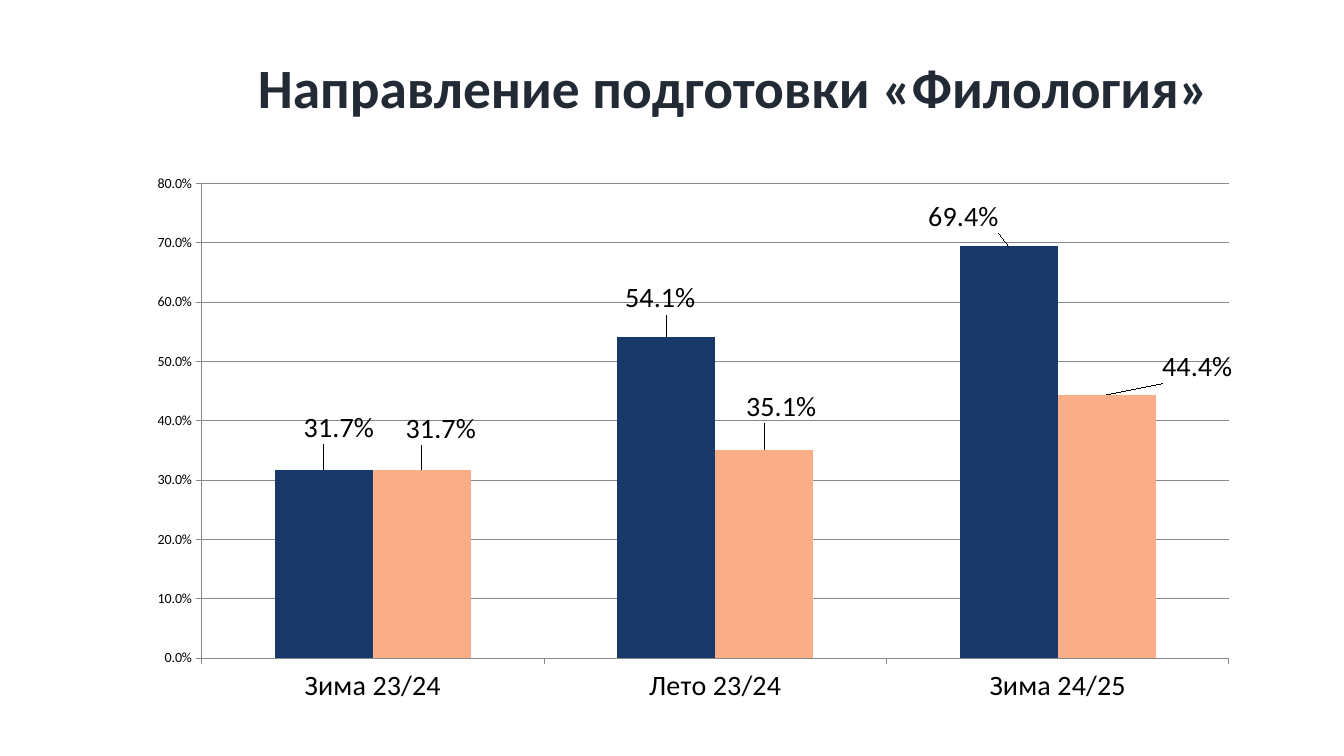
from lxml import etree
from pptx import Presentation
from pptx.chart.data import CategoryChartData as Data
from pptx.dml.color import RGBColor
from pptx.enum.chart import XL_CHART_TYPE as Kind, XL_LABEL_POSITION as Pos
from pptx.enum.chart import XL_TICK_MARK as Tick
from pptx.enum.text import MSO_ANCHOR as Anchor, PP_ALIGN as Align
from pptx.oxml.ns import qn
from pptx.util import Inches, Pt

WIDE, HIGH = 13.33, 7.5
# Chart box and the plot inside it, in inches
BOX = (1.35, 1.64, 11.06, 5.45)
PLOT = (0.65, 0.18, 10.19, 4.71)
TERMS = ["Зима 23/24", "Лето 23/24", "Зима 24/25"]
# Name, colour, values, label shifts in inches
ROWS = [
    ("Series 1", "1A396B", (0.317, 0.541, 0.694),
     ((0.15, -0.21), (-0.06, -0.18), (-0.45, -0.09))),
    ("Series 2", "FBAD87", (0.317, 0.351, 0.444),
     ((0.19, -0.2), (0.17, -0.22), (0.9, -0.07))),
]


def hue(code):
    return RGBColor.from_string(code)


def style(font, size, code="000000", bold=False):
    looks = {"name": "Calibri", "size": Pt(size), "bold": bold}
    for key, value in looks.items():
        setattr(font, key, value)
    font.color.rgb = hue(code)


def rule(line):
    line.color.rgb = hue("888888")
    line.width = Pt(0.75)


def place(node, after, **parts):
    """Put a manual layout after a chart element's child."""
    for old in node.findall(qn("c:layout")):
        node.remove(old)
    layout = etree.Element(qn("c:layout"))
    if after is None:
        node.insert(0, layout)
    else:
        after.addnext(layout)
    manual = etree.SubElement(layout, qn("c:manualLayout"))
    for tag, value in parts.items():
        etree.SubElement(manual, qn("c:" + tag)).set("val", str(value))


def add_title(slide, text):
    box = slide.shapes.add_textbox(
        Inches(2.46), Inches(0.6), Inches(9.96), Inches(1.12))
    frame = box.text_frame
    looks = {"word_wrap": True, "vertical_anchor": Anchor.TOP,
             "margin_top": 0, "margin_bottom": 0}
    for key, value in looks.items():
        setattr(frame, key, value)
    para = frame.paragraphs[0]
    para.alignment, para.line_spacing = Align.LEFT, 0.9
    run = para.add_run()
    run.text = text
    style(run.font, 39.6, "222A35", True)


def set_axis(axis, size):
    axis.major_tick_mark = Tick.OUTSIDE
    axis.minor_tick_mark = Tick.NONE
    style(axis.tick_labels.font, size)
    rule(axis.format.line)


def set_bars(bars, code, shifts):
    bars.format.fill.solid()
    bars.format.fill.fore_color.rgb = hue(code)
    bars.invert_if_negative = False
    labels = bars.data_labels
    labels.show_value = True
    labels.number_format, labels.number_format_is_linked = "0.0%", False
    style(labels.font, 20)
    # Each label is moved from its place above the bar
    for i, (x, y) in enumerate(shifts):
        label = bars.points[i].data_label
        label.position = Pos.OUTSIDE_END
        style(label.font, 20)
    for node, (x, y) in zip(labels._element.findall(qn("c:dLbl")), shifts):
        place(node, node.find(qn("c:idx")), x=x / BOX[2], y=y / BOX[3])


def add_bars(slide):
    data = Data(number_format="0.0%")
    data.categories = TERMS
    for name, _, values, _ in ROWS:
        data.add_series(name, values)
    chart = slide.shapes.add_chart(
        Kind.COLUMN_CLUSTERED, *map(Inches, BOX), data).chart
    chart.has_legend = chart.has_title = False
    style(chart.font, 10)
    plot = chart.plots[0]
    plot.gap_width, plot.overlap, plot.vary_by_categories = 150, 0, False

    # Axes and grid
    set_axis(chart.category_axis, 20)
    axis = chart.value_axis
    set_axis(axis, 10)
    axis.minimum_scale, axis.maximum_scale, axis.major_unit = 0, 0.8, 0.1
    axis.tick_labels.number_format = "0.0%"
    axis.tick_labels.number_format_is_linked = False
    axis.has_major_gridlines = True
    rule(axis.major_gridlines.format.line)

    # Bars and plot area
    for bars, (_, code, _, shifts) in zip(plot.series, ROWS):
        set_bars(bars, code, shifts)
    x, y, w, h = PLOT
    area = chart._chartSpace.find(".//" + qn("c:plotArea"))
    place(area, None, layoutTarget="inner", xMode="edge", yMode="edge",
          x=x / BOX[2], y=y / BOX[3], w=w / BOX[2], h=h / BOX[3])


def main():
    deck = Presentation()
    deck.slide_width, deck.slide_height = Inches(WIDE), Inches(HIGH)
    slide = deck.slides.add_slide(deck.slide_layouts[6])
    add_title(slide, "Направление подготовки «Филология»")
    add_bars(slide)
    deck.save("out.pptx")


if __name__ == "__main__":
    main()
